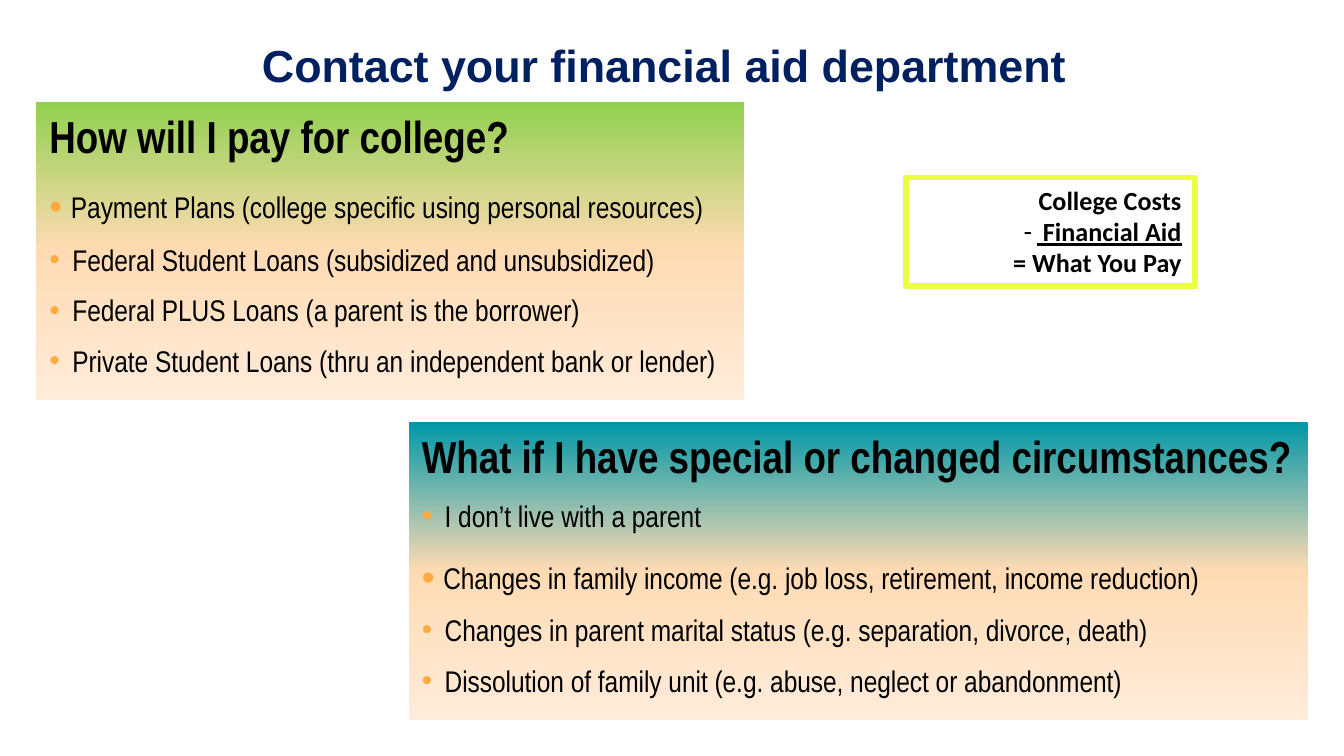
from dataclasses import dataclass

from copy import deepcopy
from lxml.etree import SubElement
from pptx import Presentation
from pptx.dml.color import RGBColor
from pptx.enum.shapes import MSO_SHAPE
from pptx.enum.text import MSO_ANCHOR, MSO_AUTO_SIZE, PP_ALIGN
from pptx.oxml.ns import qn
from pptx.util import Inches, Pt

WIDE = Inches(10)
HIGH = WIDE * 9 // 16
EDGE = 2.7


@dataclass(frozen=True)
class Theme:
    """Colours, fonts and type sizes of the slide."""
    navy: str = "002060"
    black: str = "000000"
    green: str = "92D050"
    teal: str = "0097A7"
    peach: str = "FFDBB4"
    cream: str = "FFECDA"
    amber: str = "FFAB40"
    lime: str = "EEFF41"
    title: str = "Arial"
    body: str = "Arial Narrow"
    sums: str = "Calibri"
    head: int = 24
    item: int = 16
    cost: int = 14


LOOK = Theme()


def rgb(tone):
    """Turn a hex string into a colour."""
    return RGBColor.from_string(tone)


def area(left, top, width, height):
    """Turn percentages of the slide into lengths."""
    pairs = ((left, WIDE), (top, HIGH), (width, WIDE), (height, HIGH))
    return [round(part * full / 100) for part, full in pairs]


def style(para, face, size, tone=LOOK.black, bold=False):
    """Format every run of a paragraph."""
    for run in para.runs:
        font = run.font
        font.name, font.size, font.bold = face, Pt(size), bold
        font.color.rgb = rgb(tone)


def bullet(para, mark, tone, hang, scale=100):
    """Give a paragraph a hanging bullet."""
    prop = para._p.get_or_add_pPr()
    prop.set("marL", str(Inches(hang)))
    prop.set("indent", str(-Inches(hang)))
    hue = SubElement(prop, qn("a:buClr"))
    SubElement(hue, qn("a:srgbClr")).set("val", tone)
    SubElement(prop, qn("a:buSzPct")).set("val", str(scale * 1000))
    SubElement(prop, qn("a:buFont")).set("typeface", LOOK.title)
    SubElement(prop, qn("a:buChar")).set("char", mark)


def box(slide, spot):
    """Add a plain rectangle with text at its top left."""
    shape = slide.shapes.add_shape(MSO_SHAPE.RECTANGLE, *area(*spot))
    shape.shadow.inherit = False
    shape.fill.background()
    shape.line.fill.background()
    frame = shape.text_frame
    frame.word_wrap = True
    frame.vertical_anchor = MSO_ANCHOR.TOP
    return shape


def fade(shape, tones):
    """Fill a shape from top to bottom with evenly spaced tones."""
    fill = shape.fill
    fill.gradient()
    fill.gradient_angle = 270
    stops = shape._element.spPr.find(".//" + qn("a:gsLst"))
    while len(stops) < len(tones):
        stops.append(deepcopy(stops[0]))
    for rank, (stop, tone) in enumerate(zip(fill.gradient_stops, tones)):
        stop.color.rgb = rgb(tone)
        stop.position = rank / (len(tones) - 1)


def panel(slide, spot, tone, head, items, large):
    """Add a shaded panel whose item at index large has a bigger bullet."""
    shape = box(slide, spot)
    fade(shape, (tone, LOOK.peach, LOOK.cream))
    frame = shape.text_frame
    frame.text = "\n".join((head, *items))
    first, *rest = frame.paragraphs
    first.alignment = PP_ALIGN.LEFT
    style(first, LOOK.body, LOOK.head, bold=True)
    for rank, para in enumerate(rest):
        big = rank == large
        para.alignment = PP_ALIGN.LEFT
        bullet(para, "•", LOOK.amber, 0.16 if big else 0.17, 125 if big else 100)
        after = rank == large + 1
        para.space_before = Pt(14 if big else 9 if after else 8)
        style(para, LOOK.body, LOOK.item)


def costs(slide, spot, lines):
    """Add the framed subtraction with its underlined middle line."""
    shape = box(slide, spot)
    shape.line.color.rgb = rgb(LOOK.lime)
    shape.line.width = Pt(3)
    frame = shape.text_frame
    frame.text = "\n".join(lines)
    for para in frame.paragraphs:
        para.alignment = PP_ALIGN.RIGHT
        style(para, LOOK.sums, LOOK.cost, bold=True)
    minus = frame.paragraphs[1]
    bullet(minus, "-", LOOK.black, 0.1)
    minus.runs[0].font.underline = True


def title(slide, spot, words):
    """Place and format the title."""
    shape = slide.shapes.title
    shape.left, shape.top, shape.width, shape.height = area(*spot)
    frame = shape.text_frame
    frame.text = words
    frame.word_wrap = True
    frame.auto_size = MSO_AUTO_SIZE.NONE
    frame.vertical_anchor = MSO_ANCHOR.TOP
    frame.margin_top = frame.margin_bottom = Inches(0.1)
    para = frame.paragraphs[0]
    para.alignment = PP_ALIGN.CENTER
    style(para, LOOK.title, LOOK.head, LOOK.navy, True)


def main():
    """Build and save the slide."""
    deck = Presentation()
    deck.slide_width, deck.slide_height = WIDE, HIGH
    slide = deck.slides.add_slide(deck.slide_layouts[5])
    title(slide, (9.2, 3.2, 80.4, 9.24), "Contact your financial aid department")
    panel(slide, (EDGE, 13.51, 52.7, 39.47), LOOK.green,
          "How will I pay for college?", (
              "Payment Plans (college specific using personal resources)",
              "Federal Student Loans (subsidized and unsubsidized)",
              "Federal PLUS Loans (a parent is the borrower)",
              "Private Student Loans (thru an independent bank or lender)"), 0)
    panel(slide, (100 - EDGE - 66.9, 55.82, 66.9, 39.47), LOOK.teal,
          "What if I have special or changed circumstances?", (
              "I don’t live with a parent",
              "Changes in family income (e.g. job loss, retirement, income reduction)",
              "Changes in parent marital status (e.g. separation, divorce, death)",
              "Dissolution of family unit (e.g. abuse, neglect or abandonment)"), 1)
    costs(slide, (67.4, 23.47, 21.5, 14.4),
          ("College Costs", " Financial Aid", "= What You Pay"))
    deck.save("out.pptx")


if __name__ == "__main__":
    main()
